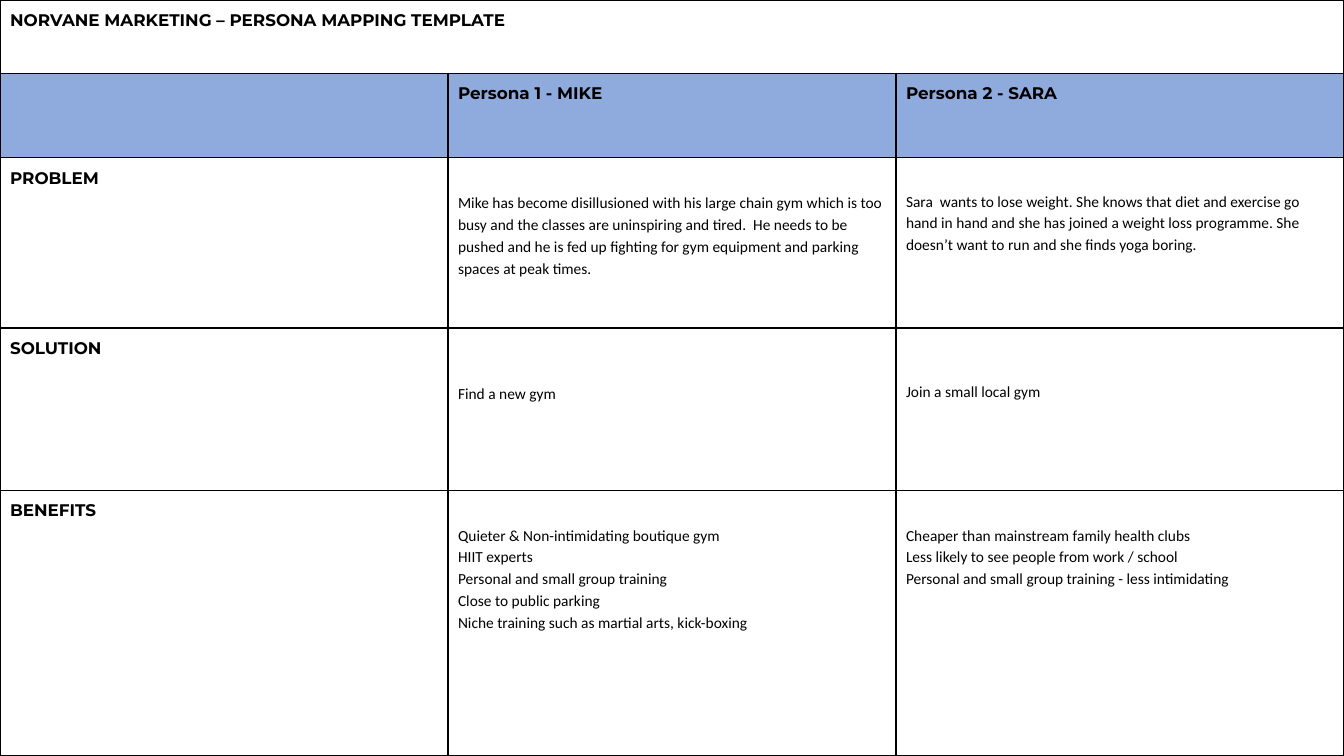
import pptx
import pptx.dml.color
import pptx.oxml.ns
import pptx.util
from lxml import etree

Pt = pptx.util.Pt
COLORS = {"text": "000000", "border": "000000", "header": "8FAADC", "body": "FFFFFF"}
WIDTH, HEIGHT = 960, 540
ROW_HEIGHTS = [52.4, 60.4, 121.6, 115.8, 189.8]
INSET = 7.2

HEADINGS = [
    ["NORVANE MARKETING – PERSONA MAPPING TEMPLATE", "", ""],
    ["", "Persona 1 - MIKE", "Persona 2 - SARA"],
]
# Row label, then for each persona the top inset and the paragraphs
PERSONA_ROWS = [
    ("PROBLEM",
     (23.8, ["Mike has become disillusioned with his large chain gym which is too busy and the "
             "classes are uninspiring and tired.  He needs to be pushed and he is fed up fighting "
             "for gym equipment and parking spaces at peak times."]),
     (22.6, ["Sara  wants to lose weight. She knows that diet and exercise go hand in hand and "
             "she has joined a weight loss programme. She doesn’t want to run and she finds "
             "yoga boring."])),
    ("SOLUTION",
     (38.4, ["Find a new gym"]),
     (37.2, ["Join a small local gym"])),
    ("BENEFITS",
     (23.8, ["Quieter & Non-intimidating boutique gym",
             "HIIT experts",
             "Personal and small group training",
             "Close to public parking",
             "Niche training such as martial arts, kick-boxing"]),
     (23.8, ["Cheaper than mainstream family health clubs",
             "Less likely to see people from work / school",
             "Personal and small group training - less intimidating"])),
]


def rgb(name):
    return pptx.dml.color.RGBColor.from_string(COLORS[name])


def write(cell, paragraphs, font="Montserrat", size=12, bold=True, spacing=None, top=INSET):
    cell.margin_left = cell.margin_right = cell.margin_bottom = Pt(INSET)
    cell.margin_top = Pt(top)
    tf = cell.text_frame
    for i, text in enumerate(paragraphs):
        p = tf.paragraphs[0] if i == 0 else tf.add_paragraph()
        if spacing:
            p.line_spacing = spacing
        r = p.add_run()
        r.text = text
        r.font.name = font
        r.font.size = Pt(size)
        r.font.bold = bold
        r.font.color.rgb = rgb("text")


def add_borders(cell):
    qn = pptx.oxml.ns.qn
    tc_pr = cell._tc.get_or_add_tcPr()
    for side in ("a:lnL", "a:lnR", "a:lnT", "a:lnB"):
        ln = etree.SubElement(tc_pr, qn(side), w=str(Pt(1)))
        fill = etree.SubElement(ln, qn("a:solidFill"))
        etree.SubElement(fill, qn("a:srgbClr"), val=COLORS["border"])


def add_grid(s):
    """Add the empty bordered table that fills the slide."""
    frame = s.shapes.add_table(len(ROW_HEIGHTS), 3, Pt(0), Pt(0), Pt(WIDTH), Pt(HEIGHT))
    table = frame.table
    table.first_row = table.horz_banding = False
    for column in table.columns:
        column.width = Pt(WIDTH / 3)
    for i, height in enumerate(ROW_HEIGHTS):
        table.rows[i].height = Pt(height)
        for cell in table.rows[i].cells:
            add_borders(cell)
            cell.fill.solid()
            cell.fill.fore_color.rgb = rgb("header" if i == 1 else "body")
    table.cell(0, 0).merge(table.cell(0, 2))
    return table


def main():
    prs = pptx.Presentation()
    prs.slide_width, prs.slide_height = Pt(WIDTH), Pt(HEIGHT)
    s = prs.slides.add_slide(prs.slide_layouts[6])
    table = add_grid(s)
    for row, headings in enumerate(HEADINGS):
        for col, heading in enumerate(headings):
            if heading:
                write(table.cell(row, col), [heading])
    for row, (label, *personas) in enumerate(PERSONA_ROWS, start=len(HEADINGS)):
        write(table.cell(row, 0), [label])
        for col, (top, paragraphs) in enumerate(personas, start=1):
            write(table.cell(row, col), paragraphs, font="Calibri", size=11, bold=False,
                  spacing=1.15, top=top)
    prs.save("out.pptx")


if __name__ == "__main__":
    main()
